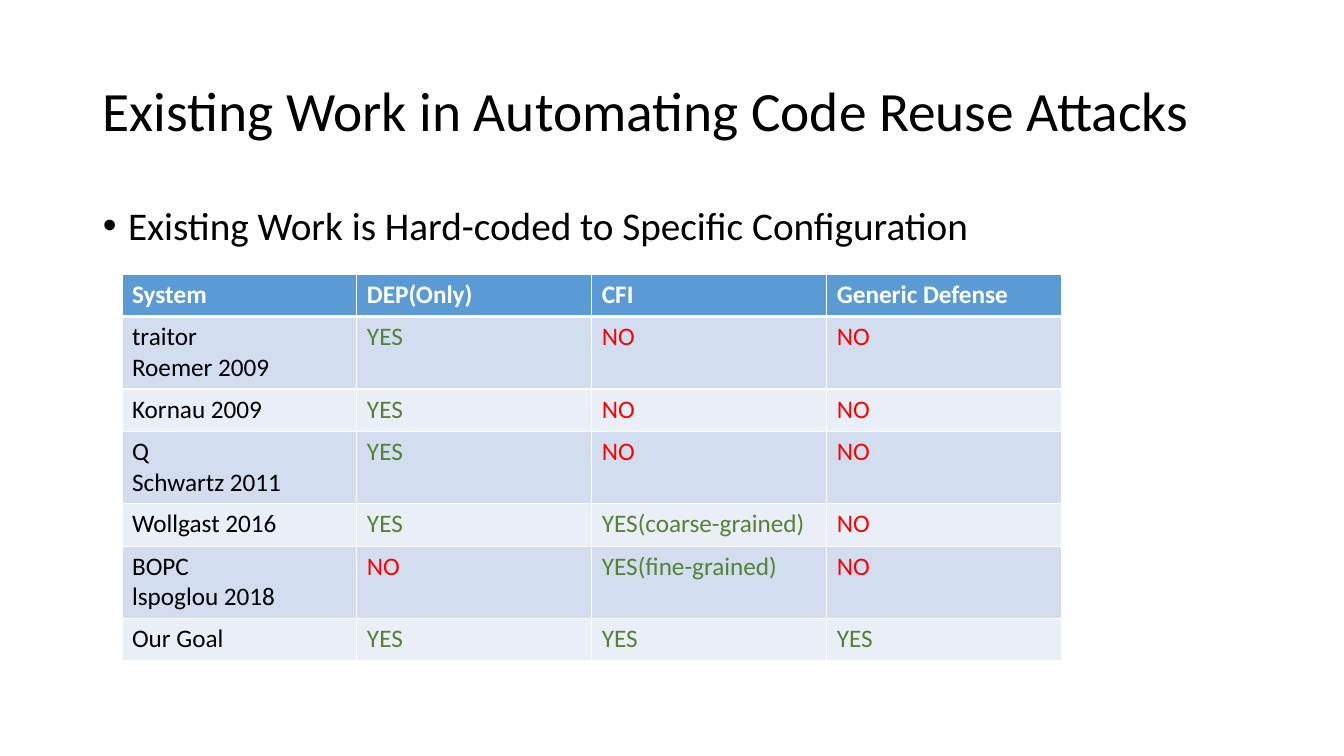
from lxml.etree import SubElement
from pptx import Presentation
from pptx.dml.color import RGBColor
from pptx.enum.text import MSO_ANCHOR, MSO_AUTO_SIZE, PP_ALIGN
from pptx.oxml import parse_xml
from pptx.oxml.ns import nsdecls, qn
from pptx.util import Inches, Pt

BLACK, WHITE, GREEN, RED = "000000", "FFFFFF", "548235", "FF0000"
HEADER_FILL, BAND_FILLS = "5B9BD5", ("D2DEEF", "EAEFF7")
COL_WIDTH, LINE_HEIGHT, CELL_PADDING = 2.33, 0.3, 0.12

HEADER = ("System", "DEP(Only)", "CFI", "Generic Defense")
SYSTEMS = (
    ("traitor\nRoemer 2009", "YES", "NO", "NO"),
    ("Kornau 2009", "YES", "NO", "NO"),
    ("Q\nSchwartz 2011", "YES", "NO", "NO"),
    ("Wollgast 2016", "YES", "YES(coarse-grained)", "NO"),
    ("BOPC\nlspoglou 2018", "NO", "YES(fine-grained)", "NO"),
    ("Our Goal", "YES", "YES", "YES"),
)


def rgb(color):
    return RGBColor.from_string(color)


def write(tf, text, size, color, bold=False):
    tf.text = text
    for p in tf.paragraphs:
        for r in p.runs:
            r.font.name = "Calibri"
            r.font.size = Pt(size)
            r.font.bold = bold
            r.font.color.rgb = rgb(color)


def fill_placeholder(sp, box, text, size, anchor):
    """Place the placeholder, write its one line and return the paragraph."""
    sp.left, sp.top, sp.width, sp.height = map(Inches, box)
    tf = sp.text_frame
    write(tf, text, size, BLACK)
    tf.auto_size = MSO_AUTO_SIZE.NONE
    tf.vertical_anchor = anchor
    p = tf.paragraphs[0]
    p.alignment = PP_ALIGN.LEFT
    p.line_spacing = 0.9
    return p


def add_bullet(p):
    p.space_before = Pt(10)
    pPr = p._p.get_or_add_pPr()
    pPr.set("marL", str(Inches(0.25)))
    pPr.set("indent", str(-Inches(0.25)))
    SubElement(pPr, qn("a:buFont")).set("typeface", "Arial")
    SubElement(pPr, qn("a:buChar")).set("char", "•")


def set_borders(cell, top=1, bottom=1):
    tcPr = cell._tc.get_or_add_tcPr()
    widths = {"lnL": 1, "lnR": 1, "lnT": top, "lnB": bottom}
    for i, (side, width) in enumerate(widths.items()):
        tcPr.insert(i, parse_xml(
            f'<a:{side} {nsdecls("a")} w="{Pt(width)}"><a:solidFill>'
            f'<a:srgbClr val="{WHITE}"/></a:solidFill></a:{side}>'))


def text_color(text, row):
    if row == 0:
        return WHITE
    if text.startswith("YES"):
        return GREEN
    return RED if text == "NO" else BLACK


def add_comparison_table(s, left, top):
    rows = (HEADER, *SYSTEMS)
    heights = [CELL_PADDING + LINE_HEIGHT * len(row[0].split("\n")) for row in rows]
    table = s.shapes.add_table(
        len(rows), len(HEADER), Inches(left), Inches(top),
        Inches(COL_WIDTH * len(HEADER)), Inches(sum(heights))).table
    for col in table.columns:
        col.width = Inches(COL_WIDTH)
    for i, row in enumerate(rows):
        table.rows[i].height = Inches(heights[i])
        fill = BAND_FILLS[(i - 1) % 2] if i else HEADER_FILL
        for j, text in enumerate(row):
            cell = table.cell(i, j)
            write(cell.text_frame, text, 18, text_color(text, i), bold=i == 0)
            cell.fill.solid()
            cell.fill.fore_color.rgb = rgb(fill)
            set_borders(cell, top=3 if i == 1 else 1, bottom=1 if i else 3)


def main():
    prs = Presentation()
    prs.slide_width, prs.slide_height = Inches(13.33), Inches(7.5)
    s = prs.slides.add_slide(prs.slide_layouts[1])
    fill_placeholder(s.shapes.title, (0.92, 0.4, 11.5, 1.45),
                     "Existing Work in Automating Code Reuse Attacks",
                     39.6, MSO_ANCHOR.MIDDLE)
    p = fill_placeholder(s.placeholders[1], (0.92, 2, 11.5, 4.76),
                         "Existing Work is Hard-coded to Specific Configuration",
                         28, MSO_ANCHOR.TOP)
    add_bullet(p)
    add_comparison_table(s, 1.21, 2.72)
    prs.save("out.pptx")


if __name__ == "__main__":
    main()
